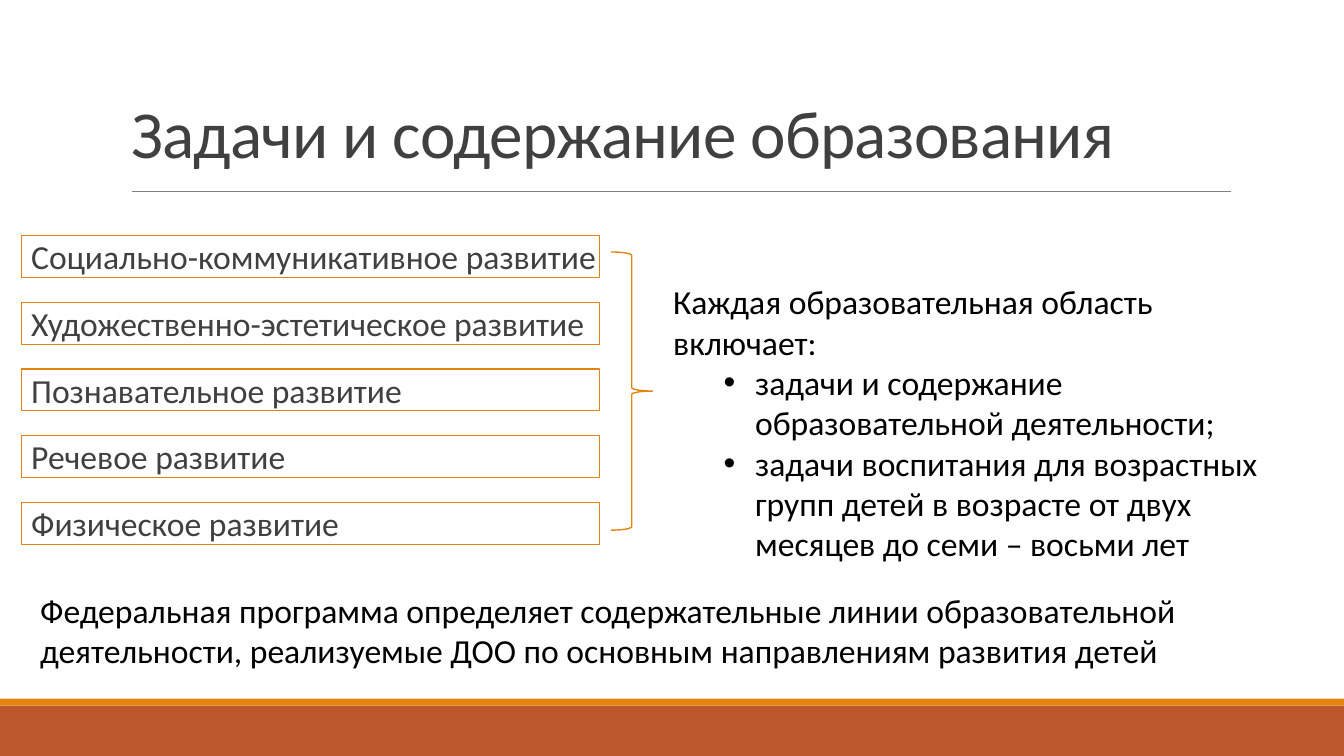
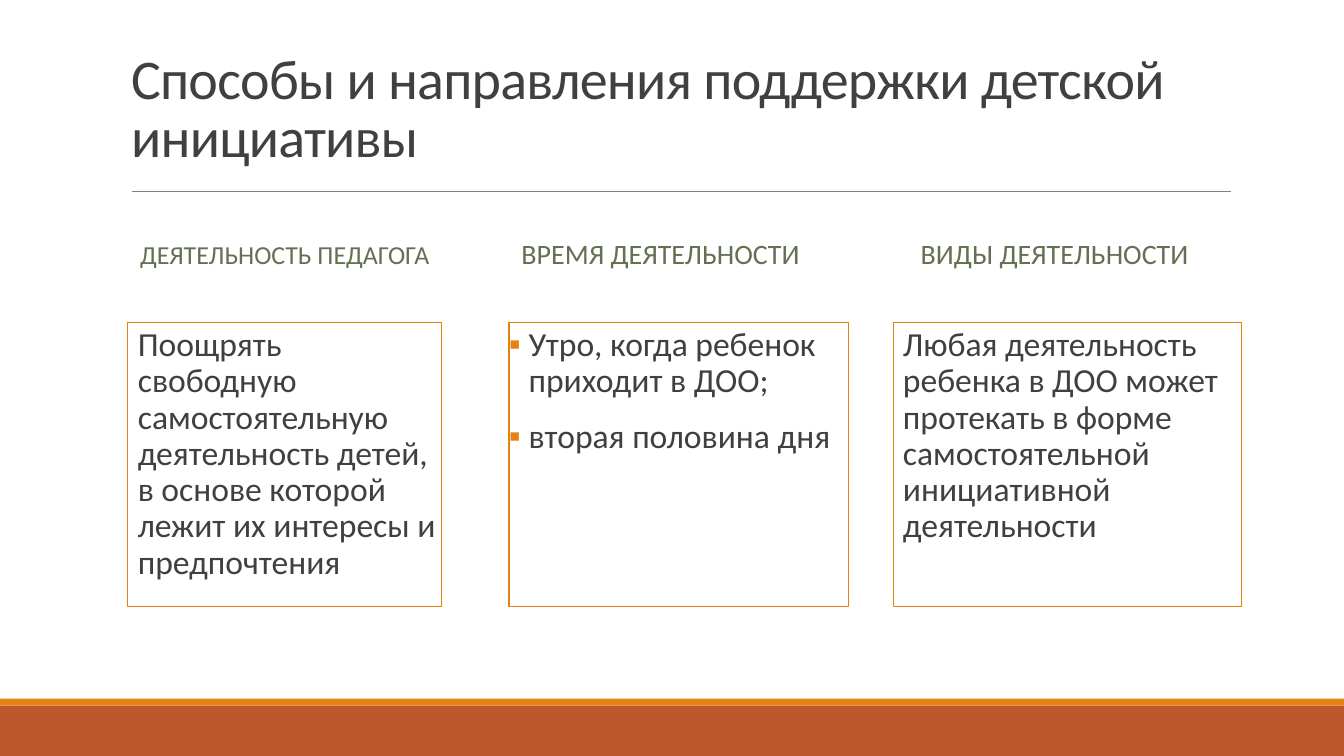
import dataclasses

import pptx
import pptx.dml.color
import pptx.enum.shapes
import pptx.enum.text
import pptx.oxml.ns
import pptx.util
from lxml import etree

Pt = pptx.util.Pt
Shape = pptx.enum.shapes.MSO_SHAPE
Align = pptx.enum.text.PP_ALIGN
Anchor = pptx.enum.text.MSO_ANCHOR
qn = pptx.oxml.ns.qn


@dataclasses.dataclass(frozen=True)
class Theme:
    font: str = "Calibri"
    rust: str = "BD582C"
    orange: str = "E48312"
    rule: str = "808080"
    ink: str = "404040"
    black: str = "000000"
    olive: str = "637052"
    body_size: float = 24
    heading_size: float = 20
    small_heading_size: float = 18.5
    title_size: float = 48
    long_title_size: float = 40


def rgb(value):
    return pptx.dml.color.RGBColor.from_string(value)


class Deck:
    def __init__(self, theme):
        self.theme = theme
        self.deck = pptx.Presentation()
        self.deck.slide_width = Pt(960)
        self.deck.slide_height = Pt(540)
        self.page = None

    def add_page(self, title, size, top):
        self.page = self.deck.slides.add_slide(self.deck.slide_layouts[5])
        self.shape(Shape.RECTANGLE, 0, 504, 960, 36, fill=self.theme.rust)
        self.shape(Shape.RECTANGLE, 0, 499, 960, 5, fill=self.theme.orange)
        self.rule(94.5, 879, 136.8)
        box = self.page.shapes.title
        box.left, box.top, box.width, box.height = Pt(86.4), Pt(top), Pt(792), Pt(114.5)
        self.set_text(box, [title], size, self.theme.ink, anchor=Anchor.MIDDLE, spacing=0.85)
        for span in box.text_frame.paragraphs[0].runs:
            span.font._element.set("spc", "-50")

    def shape(self, kind, left, top, width, height, fill=None, line=None, weight=0.75):
        box = self.page.shapes.add_shape(kind, Pt(left), Pt(top), Pt(width), Pt(height))
        box.shadow.inherit = False
        if fill:
            box.fill.solid()
            box.fill.fore_color.rgb = rgb(fill)
        else:
            box.fill.background()
        if line:
            box.line.color.rgb = rgb(line)
            box.line.width = Pt(weight)
        else:
            box.line.fill.background()
        return box

    def rule(self, left, right, top):
        line = self.page.shapes.add_connector(
            pptx.enum.shapes.MSO_CONNECTOR.STRAIGHT, Pt(left), Pt(top), Pt(right), Pt(top))
        line.line.color.rgb = rgb(self.theme.rule)
        line.line.width = Pt(0.5)
        etree.SubElement(line._element.spPr, qn("a:effectLst"))

    def set_text(self, box, lines, size, color, align=Align.LEFT, anchor=Anchor.TOP,
                 spacing=None, before=0, after=0):
        frame = box.text_frame
        frame.text = "\n".join(lines)
        frame.word_wrap = True
        frame.auto_size = pptx.enum.text.MSO_AUTO_SIZE.NONE
        frame.vertical_anchor = anchor
        for para in frame.paragraphs:
            para.alignment = align
            para.line_spacing = spacing
            para.space_before = Pt(before)
            para.space_after = Pt(after)
            for span in para.runs:
                span.font.name = self.theme.font
                span.font.size = Pt(size)
                span.font.color.rgb = rgb(color)

    def bullet(self, para, mark, color, margin, hang):
        properties = para._p.get_or_add_pPr()
        properties.set("marL", str(Pt(margin)))
        properties.set("indent", str(-Pt(hang)))
        bullet_color = etree.SubElement(properties, qn("a:buClr"))
        etree.SubElement(bullet_color, qn("a:srgbClr"), val=color)
        etree.SubElement(properties, qn("a:buFont"), typeface="Arial")
        etree.SubElement(properties, qn("a:buChar"), char=mark)

    def panel(self, left, top, width, height, lines, bulleted=False):
        theme = self.theme
        box = self.shape(Shape.RECTANGLE, left, top, width, height, line=theme.orange)
        self.set_text(box, lines, theme.body_size, theme.ink, spacing=0.9, before=12, after=2)
        frame = box.text_frame
        frame.margin_left = 0 if bulleted else Pt(7.2)
        frame.margin_right = 0
        if bulleted:
            for para in frame.paragraphs:
                self.bullet(para, "▪", theme.orange, 14, 14)

    def text(self, left, top, width, height, lines, size=None, color=None, **style):
        box = self.page.shapes.add_textbox(Pt(left), Pt(top), Pt(width), Pt(height))
        self.set_text(box, lines, size or self.theme.body_size,
                      color or self.theme.black, **style)
        return box

    def heading(self, left, width, words, size):
        self.text(left, 154.8, width, 56, [words], size, self.theme.olive,
                  align=Align.CENTER, anchor=Anchor.MIDDLE, spacing=0.9)


def add_content_page(deck):
    theme = deck.theme
    deck.add_page("Задачи и содержание образования", theme.title_size, 41)
    areas = [
        "Социально-коммуникативное развитие",
        "Художественно-эстетическое развитие",
        "Познавательное развитие",
        "Речевое развитие",
        "Физическое развитие",
    ]
    for row, area in enumerate(areas):
        deck.panel(15.2, 168 + 47.8 * row, 413.3, 30, [area])
    deck.shape(Shape.RIGHT_BRACE, 436.5, 180, 29.5, 198.7, line=theme.orange, weight=1)
    box = deck.text(473.8, 197.3, 455.8, 211, [
        "Каждая образовательная область включает:",
        "задачи и содержание образовательной деятельности;",
        "задачи воспитания для возрастных групп детей в возрасте от двух месяцев "
        "до семи – восьми лет",
    ])
    for para in box.text_frame.paragraphs[1:]:
        para.level = 1
        deck.bullet(para, "•", theme.black, 58.5, 22.5)
    deck.text(21.6, 417.6, 871.2, 65.5, [
        "Федеральная программа определяет содержательные линии образовательной "
        "деятельности, реализуемые ДОО по основным направлениям развития детей",
    ])


def add_initiative_page(deck):
    theme = deck.theme
    deck.add_page("Способы и направления поддержки детской инициативы",
                  theme.long_title_size, 22.3)
    headings = [
        (87.8, 235.4, "ДЕЯТЕЛЬНОСТЬ ПЕДАГОГА ", theme.small_heading_size),
        (362.9, 222.5, "ВРЕМЯ ДЕЯТЕЛЬНОСТИ ", theme.heading_size),
        (637.9, 235.4, "ВИДЫ ДЕЯТЕЛЬНОСТИ ", theme.heading_size),
    ]
    panels = [
        (91.4, 224, ["Поощрять свободную самостоятельную деятельность детей, "
                     "в основе которой лежит их интересы и предпочтения"]),
        (363.6, 242.6, ["Утро, когда ребенок приходит в ДОО;", "вторая половина дня"]),
        (637.9, 249.1, ["Любая деятельность ребенка в ДОО может протекать в форме "
                        "самостоятельной инициативной деятельности"]),
    ]
    for heading in headings:
        deck.heading(*heading)
    for left, width, lines in panels:
        deck.panel(left, 230.4, width, 203, lines, bulleted=len(lines) > 1)


def main():
    deck = Deck(Theme())
    add_content_page(deck)
    add_initiative_page(deck)
    deck.deck.save("out.pptx")


if __name__ == "__main__":
    main()
